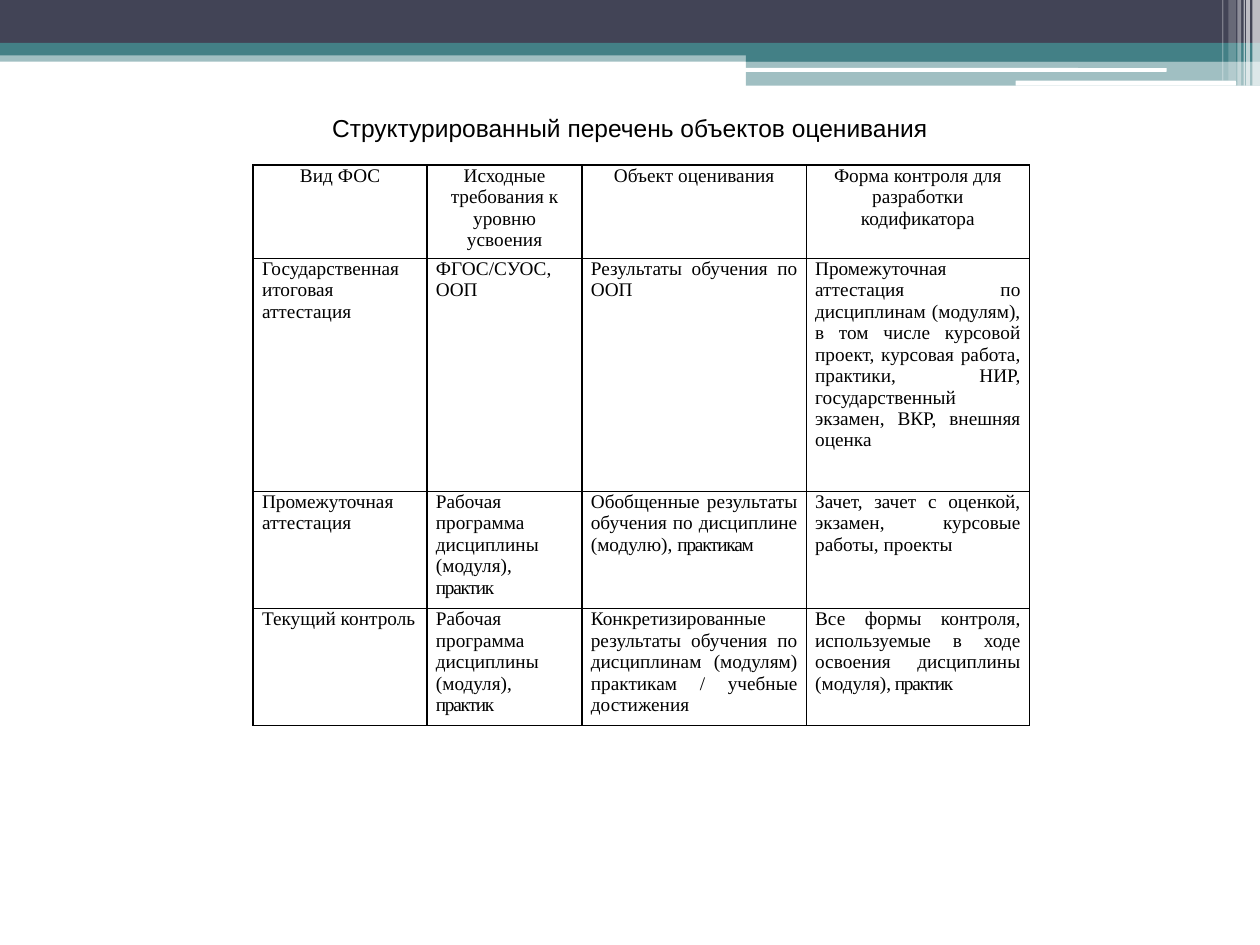
from lxml import etree
from pptx import Presentation, util as u
from pptx.dml.color import RGBColor
from pptx.enum import shapes, text
from pptx.oxml.ns import qn

BLACK = RGBColor(0, 0, 0)
WHITE = RGBColor(255, 255, 255)
SLATE = RGBColor(0x42, 0x44, 0x56)
TEAL = RGBColor(0x43, 0x80, 0x86)

TITLE = "Структурированный перечень объектов оценивания"
HEADER = ["Вид ФОС", "Исходные требования к уровню усвоения", "Объект оценивания",
          "Форма контроля для разработки кодификатора"]
PROGRAMME = ("Рабочая программа дисциплины (модуля), ", "практик")
BODY = [
    [("Государственная итоговая аттестация",), ("ФГОС/СУОС, ООП",),
     ("Результаты обучения по ООП",),
     ("Промежуточная аттестация по дисциплинам (модулям), в том числе курсовой проект, "
      "курсовая работа, практики, НИР, государственный экзамен, ВКР, внешняя оценка",)],
    [("Промежуточная аттестация",), PROGRAMME,
     ("Обобщенные результаты обучения по дисциплине (модулю), ", "практикам"),
     ("Зачет, зачет с оценкой, экзамен, курсовые работы, проекты",)],
    [("Текущий контроль",), PROGRAMME,
     ("Конкретизированные результаты обучения по дисциплинам (модулям) практикам / "
      "учебные достижения",),
     ("Все формы контроля, используемые в ходе освоения дисциплины (модуля),", " практик")],
]
COLUMN_WIDTHS = [1.38, 1.23, 1.78, 1.77]
ROW_HEIGHTS = [0.74, 1.85, 0.93, 0.93]

BANDS = [
    (0, 0.4, 10, 0.09, TEAL, 50),
    (0, 0, 10, 0.34, SLATE, 100),
    (0, 0.34, 10, 0.1, TEAL, 100),
    (5.92, 0.39, 4.08, 0.1, TEAL, 100),
    (5.92, 0.48, 4.08, 0.2, TEAL, 50),
]
HIGHLIGHTS = [(5.91, 0.54, 3.35, 0.03), (8.06, 0.64, 1.75, 0.04)]
STRIPES = [(9.94, 0.06, 0.68, 65), (9.89, 0.03, 0.68, 65), (9.87, 0.01, 0.68, 60),
           (9.82, 0.03, 0.68, 40), (9.75, 0.06, 0.64, 20), (9.7, 0.01, 0.64, 30)]


def add_block(slide, left, top, width, height, color, opacity=100,
              kind=shapes.MSO_SHAPE.RECTANGLE):
    shape = slide.shapes.add_shape(kind, *map(u.Inches, (left, top, width, height)))
    shape.shadow.inherit = False
    shape.line.fill.background()
    shape.fill.solid()
    shape.fill.fore_color.rgb = color
    if opacity < 100:
        color_node = shape.fill._xPr.find(".//" + qn("a:srgbClr"))
        etree.SubElement(color_node, qn("a:alpha"), val=str(opacity * 1000))
    return shape


def format_run(run, font_name, size):
    run.font.name = font_name
    run.font.size = u.Pt(size)
    run.font.color.rgb = BLACK


def add_borders(cell):
    properties = cell._tc.get_or_add_tcPr()
    for position, side in enumerate(("a:lnL", "a:lnR", "a:lnT", "a:lnB")):
        line = etree.Element(qn(side), w=str(u.Pt(1)))
        fill = etree.SubElement(line, qn("a:solidFill"))
        etree.SubElement(fill, qn("a:srgbClr"), val=str(BLACK))
        properties.insert(position, line)


def fill_cell(cell, parts, alignment):
    cell.fill.background()
    cell.margin_left = cell.margin_right = u.Inches(0.07)
    cell.margin_top = cell.margin_bottom = 0
    paragraph = cell.text_frame.paragraphs[0]
    paragraph.alignment = alignment
    for index, part in enumerate(parts):
        run = paragraph.add_run()
        run.text = part
        format_run(run, "Times New Roman", 11)
        if index:
            run.font._element.set("spc", "-70")
    add_borders(cell)


def add_assessment_table(slide):
    rows = [[(heading,) for heading in HEADER]] + BODY
    frame = slide.shapes.add_table(
        len(rows), len(HEADER), u.Inches(2.01), u.Inches(1.31),
        u.Inches(sum(COLUMN_WIDTHS)), u.Inches(sum(ROW_HEIGHTS)))
    table = frame.table
    table.first_row = table.horz_banding = False
    for column, width in zip(table.columns, COLUMN_WIDTHS):
        column.width = u.Inches(width)
    for row, height, contents in zip(table.rows, ROW_HEIGHTS, rows):
        row.height = u.Inches(height)
        alignment = text.PP_ALIGN.CENTER if contents is rows[0] else text.PP_ALIGN.JUSTIFY
        for cell, parts in zip(row.cells, contents):
            fill_cell(cell, parts, alignment)


def add_title(slide):
    title = add_block(slide, 2.52, 0.84, 4.96, 0.34, WHITE)
    frame = title.text_frame
    frame.text = TITLE
    frame.word_wrap = False
    frame.auto_size = text.MSO_AUTO_SIZE.SHAPE_TO_FIT_TEXT
    frame.vertical_anchor = text.MSO_ANCHOR.MIDDLE
    paragraph = frame.paragraphs[0]
    paragraph.alignment = text.PP_ALIGN.CENTER
    format_run(paragraph.runs[0], "Arial", 14)


def main():
    presentation = Presentation()
    presentation.slide_width = u.Inches(10)
    presentation.slide_height = u.Inches(7.5)
    slide = presentation.slides.add_slide(presentation.slide_layouts[6])
    for band in BANDS:
        add_block(slide, *band)
    for highlight in HIGHLIGHTS:
        add_block(slide, *highlight, WHITE, kind=shapes.MSO_SHAPE.ROUNDED_RECTANGLE)
    for left, width, height, opacity in STRIPES:
        add_block(slide, left, 0, width, height, WHITE, opacity)
    add_assessment_table(slide)
    add_title(slide)
    presentation.save("out.pptx")


if __name__ == "__main__":
    main()
